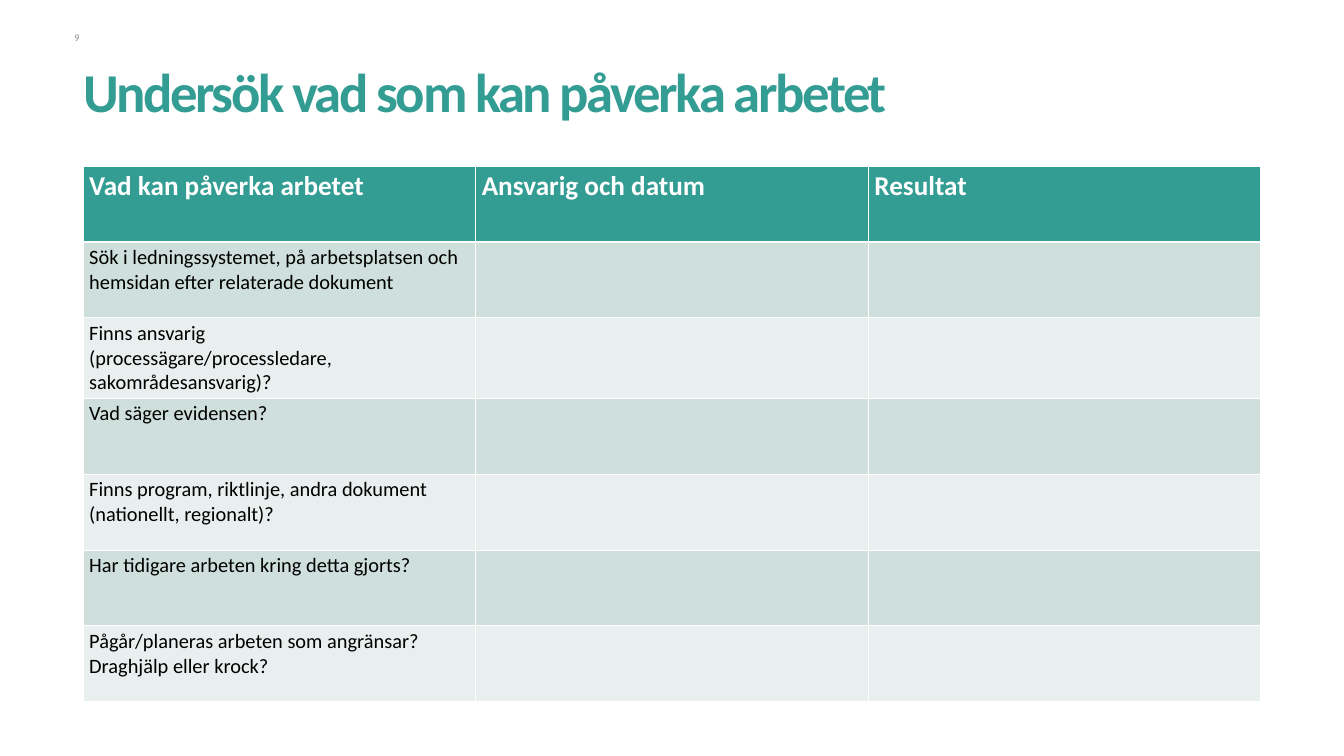
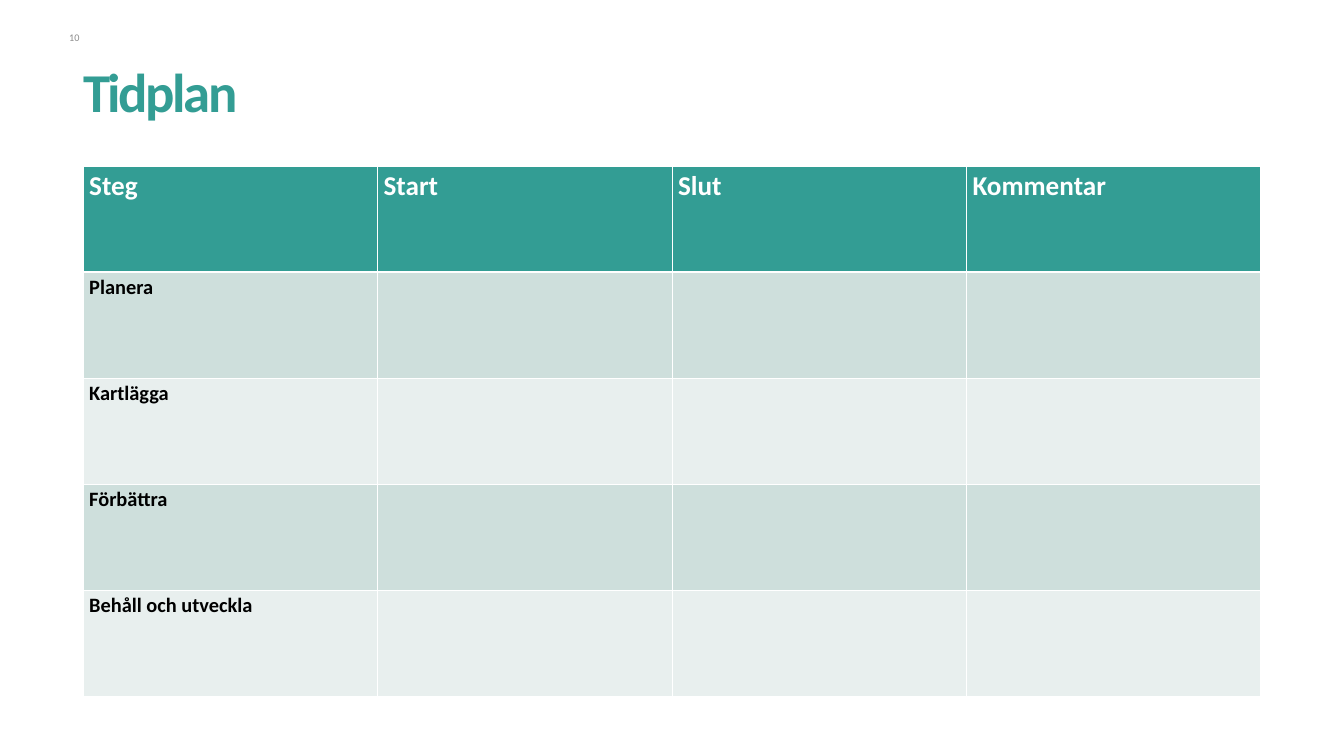
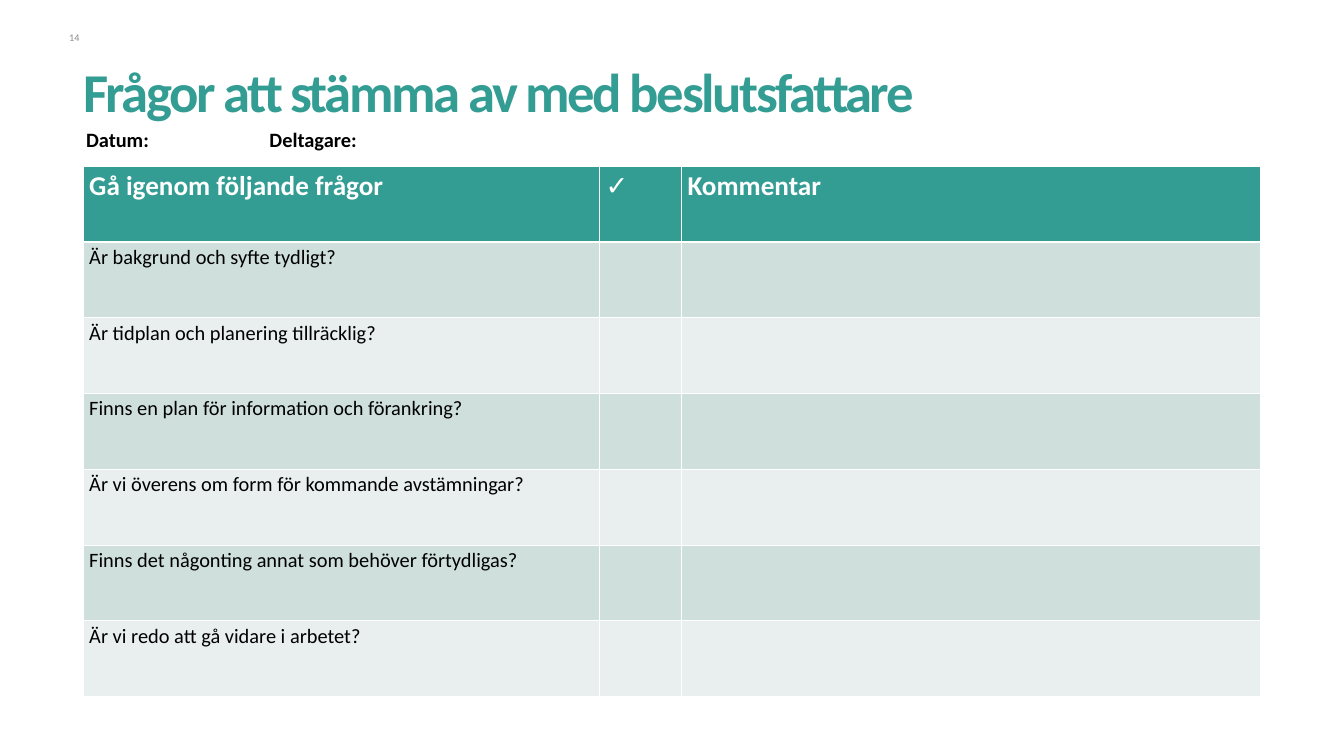
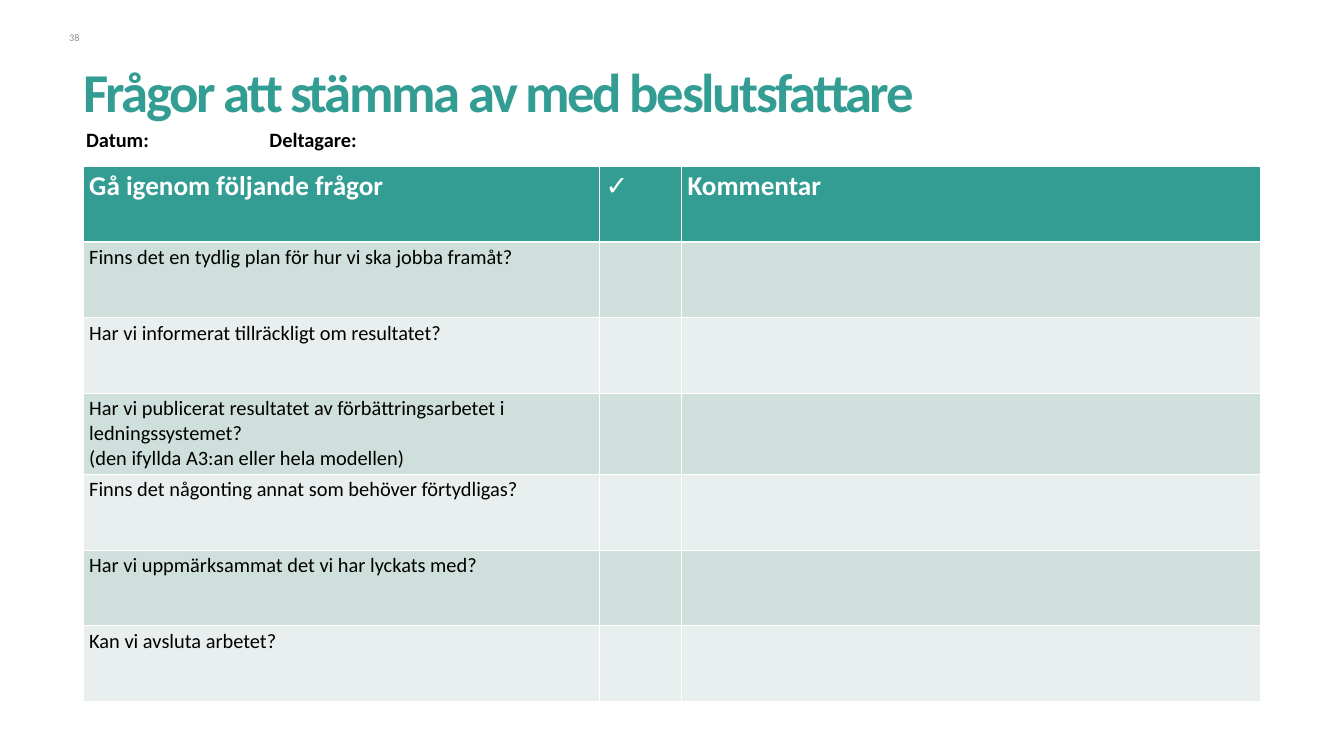
from typing import NamedTuple

import lxml.etree
import pptx
import pptx.dml.color
import pptx.enum.text
import pptx.oxml.ns
import pptx.util

Inches = pptx.util.Inches
Pt = pptx.util.Pt
RGBColor = pptx.dml.color.RGBColor
Align = pptx.enum.text.PP_ALIGN
Anchor = pptx.enum.text.MSO_ANCHOR
qn = pptx.oxml.ns.qn

TEAL = RGBColor(0x33, 0x9D, 0x94)
BAND_DARK = RGBColor(0xCE, 0xDF, 0xDC)
BAND_LIGHT = RGBColor(0xE8, 0xEF, 0xEE)
WHITE = RGBColor(0xFF, 0xFF, 0xFF)
BLACK = RGBColor(0x00, 0x00, 0x00)
GREY = RGBColor(0x8C, 0x8C, 0x8C)
FONT = "Calibri"
TITLE_ONLY = 5
CHECK = "✓"


class Box(NamedTuple):
    """A rectangle on the slide, in inches."""
    left: float
    top: float
    width: float
    height: float

    def lengths(self):
        """Return the four sides as lengths."""
        return [Inches(side) for side in self]


PAGE_NUMBER = Box(0.91, 0.52, 0.39, 0.2)
TITLE = Box(1.36, 0.96, 19.27, 1.14)
MEETING = Box(1.31, 2.03, 15.39, 0.5)
GRID = Box(1.36, 2.72, 19.27, 8.68)

EQUAL_THIRDS = [1, 1, 1]
EQUAL_QUARTERS = [1, 1, 1, 1]
CHECKLIST_COLUMNS = [8.45, 1.34, 9.48]
CHECKLIST_HEADINGS = ["Gå igenom följande frågor", CHECK, "Kommentar"]
CHECKLIST_TITLE = "Frågor att stämma av med beslutsfattare"

INFLUENCES = [
    "Sök i ledningssystemet, på arbetsplatsen och hemsidan efter relaterade dokument",
    "Finns ansvarig\n(processägare/processledare, sakområdesansvarig)?",
    "Vad säger evidensen?",
    "Finns program, riktlinje, andra dokument (nationellt, regionalt)?",
    "Har tidigare arbeten kring detta gjorts?",
    "Pågår/planeras arbeten som angränsar?\nDraghjälp eller krock?",
]
STEPS = ["Planera", "Kartlägga", "Förbättra", "Behåll och utveckla"]
PLANNING_QUESTIONS = [
    "Är bakgrund och syfte tydligt?",
    "Är tidplan och planering tillräcklig?",
    "Finns en plan för information och förankring?",
    "Är vi överens om form för kommande avstämningar?",
    "Finns det någonting annat som behöver förtydligas?",
    "Är vi redo att gå vidare i arbetet?",
]
CLOSING_QUESTIONS = [
    "Finns det en tydlig plan för hur vi ska jobba framåt?",
    "Har vi informerat tillräckligt om resultatet?",
    "Har vi publicerat resultatet av förbättringsarbetet i ledningssystemet?\n"
    "(den ifyllda A3:an eller hela modellen)",
    "Finns det någonting annat som behöver förtydligas?",
    "Har vi uppmärksammat det vi har lyckats med?",
    "Kan vi avsluta arbetet?",
]


def write_text(frame, text, size=24, color=BLACK, bold=False, align=Align.LEFT,
               line_spacing=None, letter_spacing=None, tab=None):
    """Write text into a frame, one paragraph a line, in one format."""
    frame.word_wrap = True
    for index, line in enumerate(text.split("\n")):
        para = frame.add_paragraph() if index else frame.paragraphs[0]
        para.alignment = align
        para.line_spacing = line_spacing
        if tab:
            stops = lxml.etree.SubElement(para._p.get_or_add_pPr(), qn("a:tabLst"))
            lxml.etree.SubElement(stops, qn("a:tab"), pos=str(Inches(tab)), algn="l")
        span = para.add_run()
        span.text = line
        span.font.name = FONT
        span.font.size = Pt(size)
        span.font.bold = bold
        span.font.color.rgb = color
        if letter_spacing:
            span.font._element.set("spc", str(int(letter_spacing * 100)))


def set_margins(frame, bottom=0):
    """Remove the inner margins of a frame, except the given bottom one."""
    frame.margin_left = frame.margin_top = frame.margin_right = 0
    frame.margin_bottom = Inches(bottom)


def add_title(slide, box, text):
    """Place and format the slide title."""
    title = slide.shapes.title
    title.left, title.top, title.width, title.height = box.lengths()
    frame = title.text_frame
    set_margins(frame, bottom=0.08)
    frame.auto_size = pptx.enum.text.MSO_AUTO_SIZE.NONE
    frame.vertical_anchor = Anchor.BOTTOM
    write_text(frame, text, size=64.5, color=TEAL, bold=True,
               line_spacing=0.85, letter_spacing=-2.8)


def add_page_number(slide, box, number):
    """Place the small page number at the top left."""
    frame = slide.shapes.add_textbox(*box.lengths()).text_frame
    set_margins(frame)
    write_text(frame, str(number), size=12, color=GREY, align=Align.RIGHT)


def add_meeting_line(slide, box):
    """Place the line for the date and participants of the meeting."""
    frame = slide.shapes.add_textbox(*box.lengths()).text_frame
    write_text(frame, "Datum:\tDeltagare:", bold=True, tab=3)


def set_borders(cell, top=1, bottom=1):
    """Draw white borders round a cell, with widths in points."""
    properties = cell._tc.get_or_add_tcPr()
    widths = {"a:lnL": 1, "a:lnR": 1, "a:lnT": top, "a:lnB": bottom}
    for index, (tag, width) in enumerate(widths.items()):
        line = lxml.etree.Element(qn(tag), w=str(Pt(width)))
        fill = lxml.etree.SubElement(line, qn("a:solidFill"))
        lxml.etree.SubElement(fill, qn("a:srgbClr"), val=str(WHITE))
        properties.insert(index, line)


def add_grid(slide, box, headings, labels, shares, bold_labels):
    """Place a table with a heading row and labels in its first column."""
    count = len(labels) + 1
    table = slide.shapes.add_table(count, len(headings), *box.lengths()).table
    table.horz_banding = False
    for column, share in zip(table.columns, shares):
        column.width = Inches(box.width * share / sum(shares))
    for number, row in enumerate(table.rows):
        row.height = Inches(box.height / count)
        for cell in row.cells:
            cell.fill.solid()
            if number == 0:
                cell.fill.fore_color.rgb = TEAL
            else:
                cell.fill.fore_color.rgb = BAND_DARK if number % 2 else BAND_LIGHT
            set_borders(cell, top=3 if number == 1 else 1, bottom=1 if number else 3)
    for index, heading in enumerate(headings):
        write_text(table.cell(0, index).text_frame, heading, size=32,
                   color=WHITE, bold=heading != CHECK)
    for number, label in enumerate(labels, start=1):
        write_text(table.cell(number, 0).text_frame, label, bold=bold_labels)


def add_table_slide(deck, number, title, headings, labels, shares, bold_labels=False):
    """Add a slide with a title, a page number and a table."""
    slide = deck.slides.add_slide(deck.slide_layouts[TITLE_ONLY])
    add_grid(slide, GRID, headings, labels, shares, bold_labels)
    add_title(slide, TITLE, title)
    add_page_number(slide, PAGE_NUMBER, number)
    return slide


def add_checklist_slide(deck, number, questions):
    """Add a slide of questions to settle with the decision makers."""
    slide = add_table_slide(deck, number, CHECKLIST_TITLE, CHECKLIST_HEADINGS,
                            questions, CHECKLIST_COLUMNS)
    add_meeting_line(slide, MEETING)


def main():
    """Build the four slides and save them."""
    deck = pptx.Presentation()
    deck.slide_width, deck.slide_height = Inches(21.99), Inches(12.37)
    add_table_slide(deck, 9, "Undersök vad som kan påverka arbetet",
                    ["Vad kan påverka arbetet", "Ansvarig och datum", "Resultat"],
                    INFLUENCES, EQUAL_THIRDS)
    add_table_slide(deck, 10, "Tidplan", ["Steg", "Start", "Slut", "Kommentar"],
                    STEPS, EQUAL_QUARTERS, bold_labels=True)
    add_checklist_slide(deck, 14, PLANNING_QUESTIONS)
    add_checklist_slide(deck, 38, CLOSING_QUESTIONS)
    deck.save("out.pptx")


if __name__ == "__main__":
    main()
